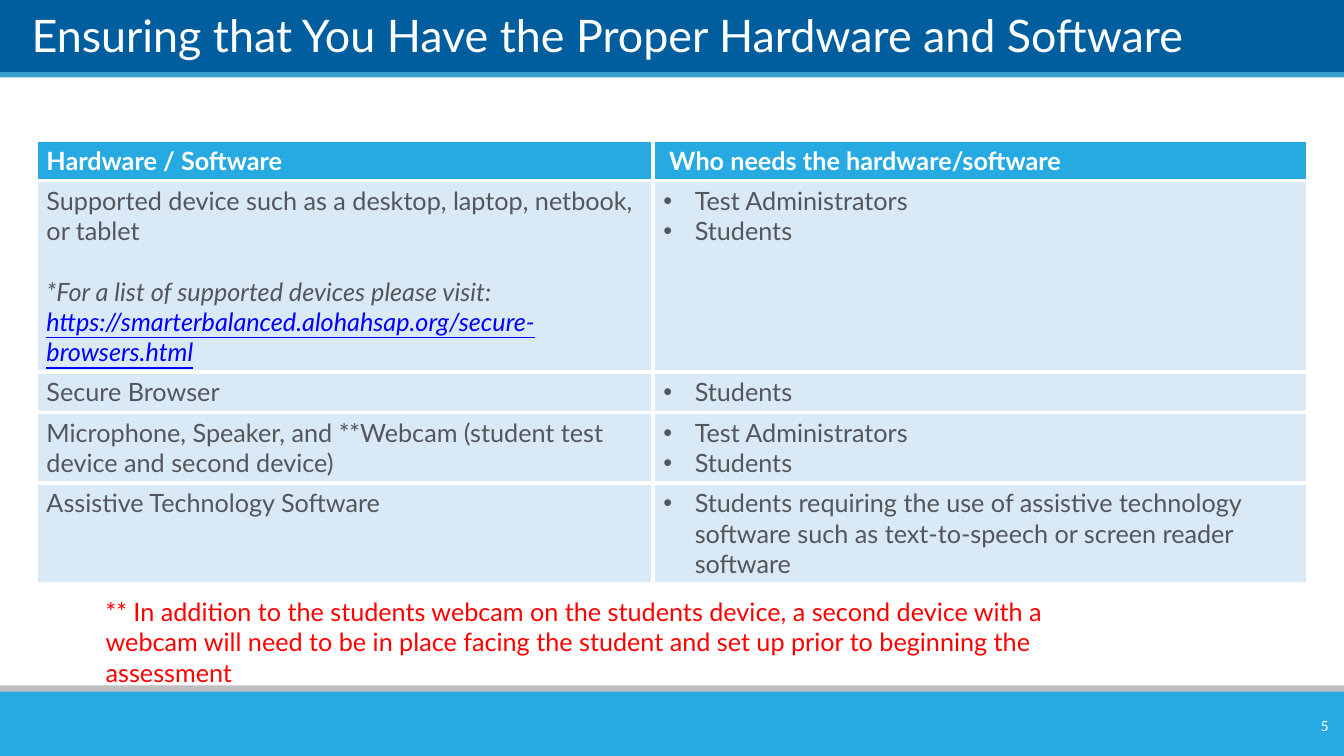
from lxml.etree import SubElement
from pptx import Presentation
from pptx.dml.color import RGBColor
from pptx.enum.shapes import MSO_SHAPE
from pptx.enum.text import MSO_ANCHOR, MSO_AUTO_SIZE, PP_ALIGN
from pptx.oxml.ns import qn
from pptx.util import Pt

WHITE = RGBColor(0xFF, 0xFF, 0xFF)
NAVY = RGBColor(0x00, 0x5E, 0x9E)
STRIPE_BLUE = RGBColor(0x35, 0xA0, 0xCE)
SKY = RGBColor(0x27, 0xAA, 0xE1)
PALE_BLUE = RGBColor(0xDA, 0xE9, 0xF6)
SILVER = RGBColor(0xBF, 0xBF, 0xBF)
SLATE = RGBColor(0x53, 0x56, 0x5A)
LINK_BLUE = RGBColor(0x00, 0x00, 0xFF)
RED = RGBColor(0xFF, 0x00, 0x00)

WIDTH, HEIGHT = 960, 540
LINE_HEIGHT = 21.6
CELL_PADDING = 7.2
BULLET_INDENT = 22.5

HEADER = ("Hardware / Software", " Who needs the hardware/software")
DEVICES = "Supported device such as a desktop, laptop, netbook, or tablet"
DEVICES_NOTE = "*For a list of supported devices please visit: "
DEVICES_LINK = "https://smarterbalanced.alohahsap.org/secure-browsers.html"
# Item, who needs it, number of text lines in the row
REQUIREMENTS = [
    (DEVICES, ["Test Administrators", "Students"], 6),
    ("Secure Browser", ["Students"], 1),
    ("Microphone, Speaker, and **Webcam (student test device and second device)",
     ["Test Administrators", "Students"], 2),
    ("Assistive Technology Software",
     ["Students requiring the use of assistive technology software such as "
      "text-to-speech or screen reader software"], 3),
]
WEBCAM_NOTE = ("** In addition to the students webcam on the students device, "
               "a second device with a webcam will need to be in place facing "
               "the student and set up prior to beginning the assessment")


def add_text(para, text, size=18, color=SLATE, bold=False, italic=False,
             underline=False):
    span = para.add_run()
    span.text = text
    font = span.font
    font.name, font.size = "Lato", Pt(size)
    font.bold, font.italic, font.underline = bold, italic, underline
    font.color.rgb = color


def add_bullet(para):
    properties = para._p.get_or_add_pPr()
    properties.set("marL", str(Pt(BULLET_INDENT)))
    properties.set("indent", str(-Pt(BULLET_INDENT)))
    SubElement(properties, qn("a:buFont"), typeface="Arial")
    SubElement(properties, qn("a:buChar"), char="•")


def style_cell(cell, fill):
    """Give the cell white borders and a solid fill."""
    properties = cell._tc.get_or_add_tcPr()
    for side in ("lnL", "lnR", "lnT", "lnB"):
        line = SubElement(properties, qn(f"a:{side}"), w=str(Pt(3)))
        solid = SubElement(line, qn("a:solidFill"))
        SubElement(solid, qn("a:srgbClr"), val=str(WHITE))
    cell.fill.solid()
    cell.fill.fore_color.rgb = fill


class SlideBuilder:
    def __init__(self, page):
        self.page = page

    def band(self, top, height, color):
        shape = self.page.shapes.add_shape(
            MSO_SHAPE.RECTANGLE, 0, Pt(top), Pt(WIDTH), Pt(height))
        shape.shadow.inherit = False
        shape.fill.solid()
        shape.fill.fore_color.rgb = color
        shape.line.fill.background()

    def text(self, left, top, width, height, text, anchor=MSO_ANCHOR.TOP,
             align=PP_ALIGN.LEFT, inset=None, grow=False, **style):
        box = self.page.shapes.add_textbox(
            Pt(left), Pt(top), Pt(width), Pt(height))
        frame = box.text_frame
        frame.word_wrap = True
        frame.vertical_anchor = anchor
        if grow:
            frame.auto_size = MSO_AUTO_SIZE.SHAPE_TO_FIT_TEXT
        if inset is not None:
            frame.margin_left = frame.margin_right = Pt(inset)
            frame.margin_top = frame.margin_bottom = Pt(inset)
        para = frame.paragraphs[0]
        para.alignment = align
        add_text(para, text, **style)

    def table(self, left, top, widths, header, requirements):
        line_counts = [1] + [lines for _, _, lines in requirements]
        heights = [lines * LINE_HEIGHT + CELL_PADDING for lines in line_counts]
        table = self.page.shapes.add_table(
            len(heights), len(widths), Pt(left), Pt(top),
            Pt(sum(widths)), Pt(sum(heights))).table
        table.horz_banding = False
        for column, width in zip(table.columns, widths):
            column.width = Pt(width)
        for row, height in zip(table.rows, heights):
            row.height = Pt(height)

        for index, title in enumerate(header):
            cell = table.cell(0, index)
            style_cell(cell, SKY)
            add_text(cell.text_frame.paragraphs[0], title,
                     color=WHITE, bold=True)
        for index, (item, users, _) in enumerate(requirements, start=1):
            item_cell, user_cell = table.cell(index, 0), table.cell(index, 1)
            style_cell(item_cell, PALE_BLUE)
            style_cell(user_cell, PALE_BLUE)
            add_text(item_cell.text_frame.paragraphs[0], item)
            frame = user_cell.text_frame
            for number, user in enumerate(users):
                para = frame.add_paragraph() if number else frame.paragraphs[0]
                add_bullet(para)
                add_text(para, user)
        return table


def main():
    deck = Presentation()
    deck.slide_width, deck.slide_height = Pt(WIDTH), Pt(HEIGHT)
    builder = SlideBuilder(deck.slides.add_slide(deck.slide_layouts[6]))

    builder.band(-0.7, 54, NAVY)
    builder.band(51.5, 3.8, STRIPE_BLUE)
    builder.band(489.6, 10, SILVER)
    builder.band(494, 46, SKY)

    builder.text(900.7, 507.6, 55.4, 21.6, "5", anchor=MSO_ANCHOR.MIDDLE,
                 align=PP_ALIGN.RIGHT, size=10, color=WHITE)
    builder.text(22.6, 2.9, 878.4, 41,
                 "Ensuring that You Have the Proper Hardware and Software",
                 anchor=MSO_ANCHOR.BOTTOM, inset=0, size=32, color=WHITE)

    table = builder.table(26, 100.1, (440.6, 467.3), HEADER, REQUIREMENTS)
    devices_para = table.cell(1, 0).text_frame.add_paragraph()
    devices_para.space_before = Pt(LINE_HEIGHT)
    add_text(devices_para, DEVICES_NOTE, italic=True)
    add_text(devices_para, DEVICES_LINK, color=LINK_BLUE,
             italic=True, underline=True)

    builder.text(68.4, 422.6, 734.4, 72, WEBCAM_NOTE, grow=True, color=RED)
    deck.save("out.pptx")


if __name__ == "__main__":
    main()
